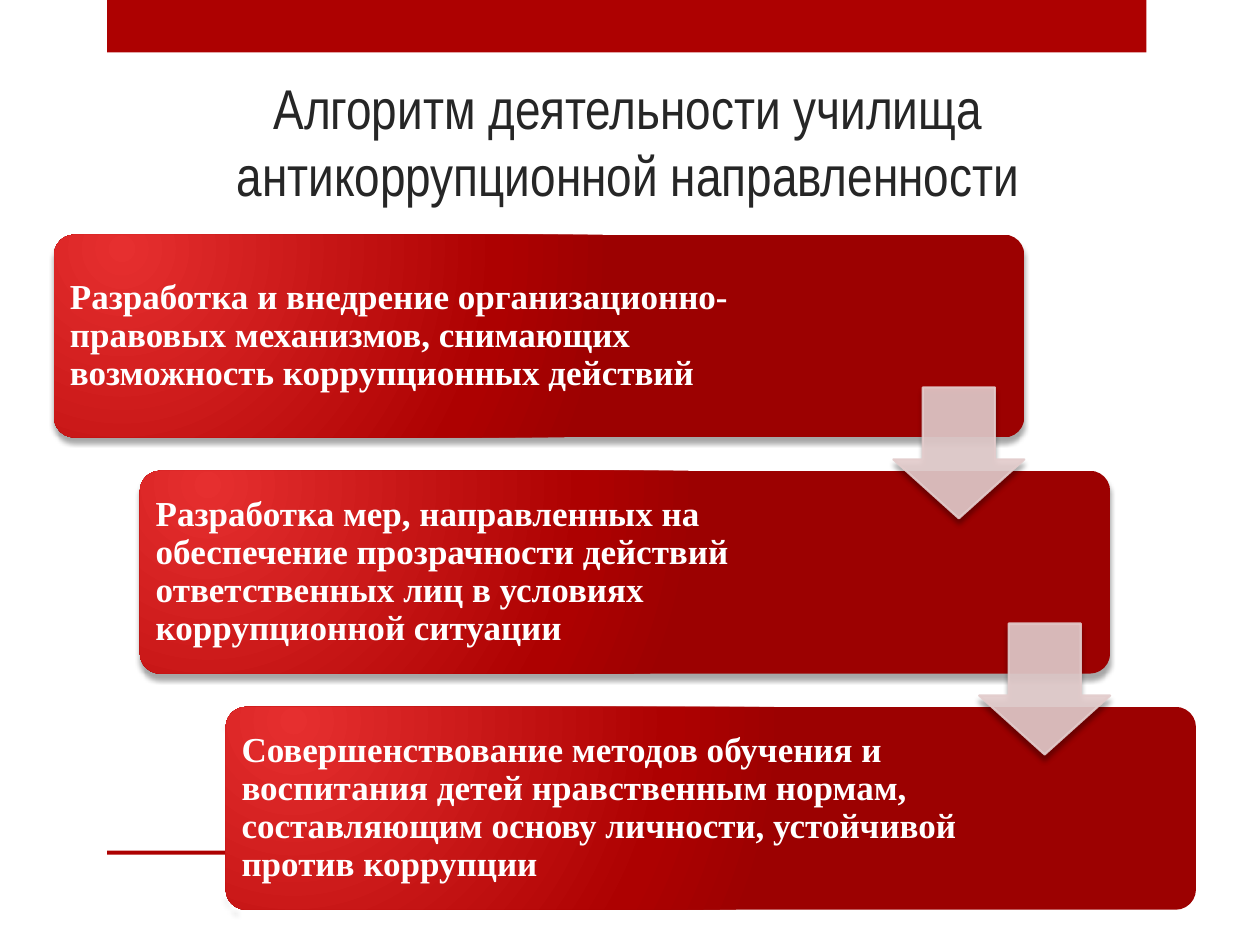
from pptx import Presentation
from pptx import util as u
from pptx.dml.color import RGBColor
from pptx.enum import shapes, text
from pptx.oxml import parse_xml
from pptx.oxml.ns import nsdecls, qn

# Content
TITLE = "Алгоритм деятельности училища антикоррупционной направленности"
STEPS = [  # wording, text width in cm
    ("Разработка и внедрение организационно-правовых механизмов, "
     "снимающих возможность коррупционных действий", 15.14),
    ("Разработка мер, направленных на обеспечение прозрачности действий "
     "ответственных лиц в условиях коррупционной ситуации", 14.94),
    ("Совершенствование методов обучения и воспитания детей нравственным "
     "нормам, составляющим основу личности, устойчивой против коррупции", 14.94),
]

# Colours
RED = RGBColor(0xAD, 0x01, 0x01)
PINK = RGBColor(0xE3, 0xCC, 0xCC)
DARK = RGBColor(0x26, 0x26, 0x26)
WHITE = RGBColor(0xFF, 0xFF, 0xFF)
BLACK = RGBColor(0, 0, 0)
CARD_STOPS = [(0, RGBColor(0xE6, 0x2F, 0x2F)), (76, RED),
              (100, RGBColor(0x9C, 0x01, 0x01))]

# Layout in cm
CARD_LEFT, CARD_TOP, CARD_WIDTH, CARD_HEIGHT = 1.09, 4.73, 19.56, 4.09
STEP_X, STEP_Y = 1.73, 4.76
TEXT_MARGIN = 0.12
ARROW_SIZE, ARROW_DROP = 2.64, 3.08


def add_shape(slide, kind, *box):
    shape = slide.shapes.add_shape(kind, *map(u.Cm, box))
    shape.line.fill.background()
    return shape


def add_bar(slide, top, height):
    bar = add_shape(slide, shapes.MSO_SHAPE.RECTANGLE, 2.16, top, 20.95, height)
    bar.shadow.inherit = False
    bar.fill.solid()
    bar.fill.fore_color.rgb = RED


def add_text(slide, wording, box, anchor, font_name, size, color, inset=None):
    text_box = slide.shapes.add_textbox(*map(u.Cm, box))
    frame = text_box.text_frame
    frame.word_wrap = True
    frame.vertical_anchor = anchor
    if inset is not None:
        frame.margin_left = frame.margin_right = u.Cm(inset)
        frame.margin_top = frame.margin_bottom = u.Cm(inset)
    paragraph = frame.paragraphs[0]
    paragraph.text = wording
    paragraph.font.name = font_name
    paragraph.font.size = u.Pt(size)
    paragraph.font.color.rgb = color
    return paragraph


def add_shadow(shape):
    shape.element.spPr.append(parse_xml(
        f'<a:effectLst {nsdecls("a")}>'
        f'<a:outerShdw blurRad="{u.Pt(3)}" dist="{u.Pt(3)}" dir="5400000" rotWithShape="0">'
        f'<a:srgbClr val="{BLACK}"><a:alpha val="35000"/></a:srgbClr>'
        '</a:outerShdw></a:effectLst>'))


def fill_radial(shape, stops):
    marks = "".join(f'<a:gs pos="{position * 1000}"><a:srgbClr val="{color}"/></a:gs>'
                    for position, color in stops)
    gradient = parse_xml(
        f'<a:gradFill {nsdecls("a")} rotWithShape="1"><a:gsLst>{marks}</a:gsLst>'
        '<a:path path="circle"><a:fillToRect l="15000" t="15000" r="100000" b="100000"/>'
        '</a:path></a:gradFill>')
    shape.element.spPr.find(qn("a:ln")).addprevious(gradient)


def add_card(slide, index, wording, text_width):
    left, top = CARD_LEFT + index * STEP_X, CARD_TOP + index * STEP_Y
    card = add_shape(slide, shapes.MSO_SHAPE.ROUNDED_RECTANGLE,
                     left, top, CARD_WIDTH, CARD_HEIGHT)
    card.adjustments[0] = 0.1
    fill_radial(card, CARD_STOPS)
    add_shadow(card)
    text_box = (left + TEXT_MARGIN, top + TEXT_MARGIN,
                text_width, CARD_HEIGHT - 2 * TEXT_MARGIN)
    paragraph = add_text(slide, wording, text_box, text.MSO_ANCHOR.MIDDLE,
                         "Times New Roman", 20, WHITE, inset=0.2)
    paragraph.font.bold = True
    paragraph.line_spacing = 0.9


def add_arrow(slide, index):
    # The arrow ends flush with the right edge of its card
    left = CARD_LEFT + index * STEP_X + CARD_WIDTH - ARROW_SIZE
    top = CARD_TOP + index * STEP_Y + ARROW_DROP
    arrow = add_shape(slide, shapes.MSO_SHAPE.DOWN_ARROW,
                      left, top, ARROW_SIZE, ARROW_SIZE)
    arrow.adjustments[0] = 0.45
    arrow.adjustments[1] = 0.55
    # The first adjustment is the head length, the second the shaft width
    arrow.adjustments[0], arrow.adjustments[1] = 0.55, 0.45
    for fill in (arrow.fill, arrow.line.fill):
        fill.solid()
        fill.fore_color.rgb = PINK
    arrow.line.width = u.Pt(1.25)
    for color in arrow.element.spPr.iter(qn("a:srgbClr")):
        color.append(parse_xml(f'<a:alpha {nsdecls("a")} val="90000"/>'))
    add_shadow(arrow)


def main():
    presentation = Presentation()
    presentation.slide_width, presentation.slide_height = u.Cm(25.4), u.Cm(19.05)
    slide = presentation.slides.add_slide(presentation.slide_layouts[6])

    # Frame bars and title
    add_bar(slide, 0, 1.06)
    add_bar(slide, 17.15, 0.08)
    title = add_text(slide, TITLE, (1.3, 1.52, 22.73, 2.8), text.MSO_ANCHOR.BOTTOM,
                     "Arial Narrow", 32, DARK)
    title.alignment = text.PP_ALIGN.CENTER

    # Staircase of cards, then the arrows between them
    for index, (wording, text_width) in enumerate(STEPS):
        add_card(slide, index, wording, text_width)
    for index in range(len(STEPS) - 1):
        add_arrow(slide, index)

    presentation.save("out.pptx")


if __name__ == "__main__":
    main()
